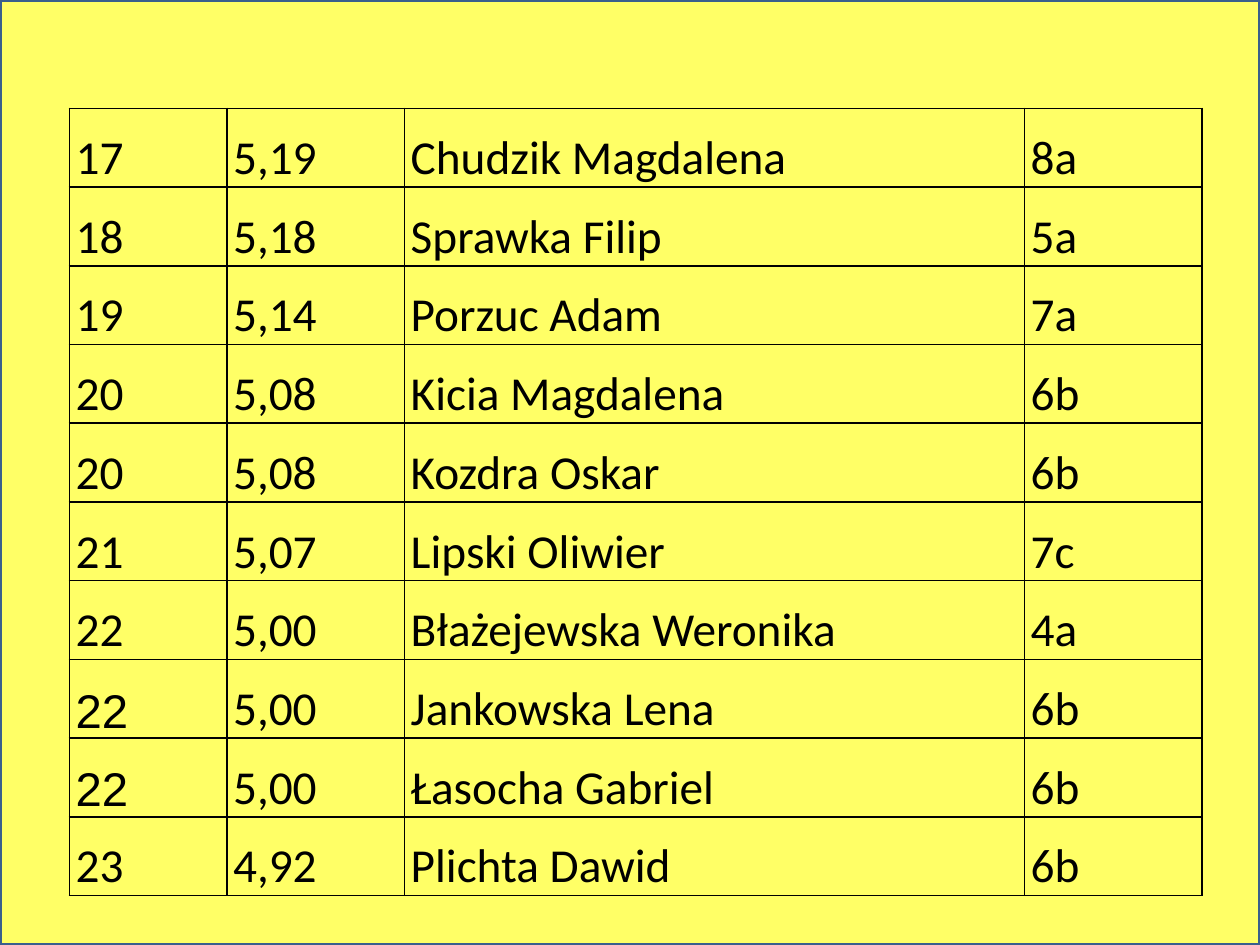
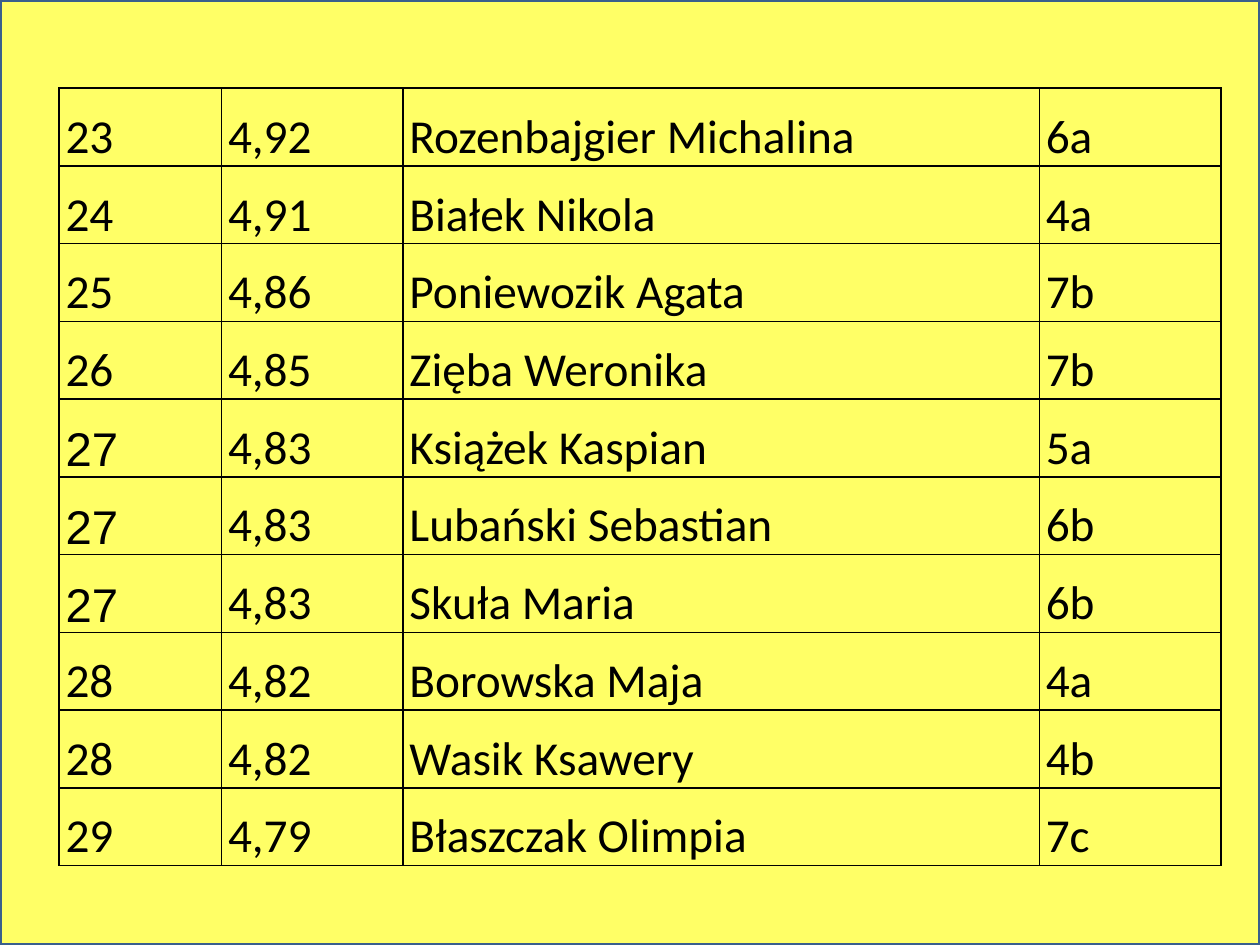
from lxml import etree
from pptx import Presentation
from pptx.dml.color import RGBColor
from pptx.enum.shapes import MSO_SHAPE
from pptx.enum.text import MSO_ANCHOR
from pptx.oxml.ns import qn
from pptx.util import Inches, Pt

RECTANGLE = MSO_SHAPE.RECTANGLE
BOTTOM = MSO_ANCHOR.BOTTOM
COLORS = {"background": "FFFF66", "frame": "3A5F8C", "ink": "000000"}
BORDER_WIDTH = Pt(1)

# Column widths follow rank, average, pupil, class; the ranks in
# "arial_rows" (by row index) are set in Arial with single line spacing.
RANKINGS = [
    {
        "left": 0.55, "top": 0.86, "height": 6.25,
        "columns": [1.25, 1.41, 4.92, 1.41],
        "arial_rows": {7, 8},
        "pupils": [
            ("17", "5,19", "Chudzik Magdalena", "8a"),
            ("18", "5,18", "Sprawka Filip", "5a"),
            ("19", "5,14", "Porzuc Adam", "7a"),
            ("20", "5,08", "Kicia Magdalena", "6b"),
            ("20", "5,08", "Kozdra Oskar", "6b"),
            ("21", "5,07", "Lipski Oliwier", "7c"),
            ("22", "5,00", "Błażejewska Weronika", "4a"),
            ("22", "5,00", "Jankowska Lena", "6b"),
            ("22", "5,00", "Łasocha Gabriel", "6b"),
            ("23", "4,92", "Plichta Dawid", "6b"),
        ],
    },
    {
        "left": 0.47, "top": 0.7, "height": 6.17,
        "columns": [1.29, 1.44, 5.05, 1.44],
        "arial_rows": {4, 5, 6},
        "pupils": [
            ("23", "4,92", "Rozenbajgier Michalina", "6a"),
            ("24", "4,91", "Białek Nikola", "4a"),
            ("25", "4,86", "Poniewozik Agata", "7b"),
            ("26", "4,85", "Zięba Weronika", "7b"),
            ("27", "4,83", "Książek Kaspian", "5a"),
            ("27", "4,83", "Lubański Sebastian", "6b"),
            ("27", "4,83", "Skuła Maria", "6b"),
            ("28", "4,82", "Borowska Maja", "4a"),
            ("28", "4,82", "Wasik Ksawery", "4b"),
            ("29", "4,79", "Błaszczak Olimpia", "7c"),
        ],
    },
]


def write_cell(cell, text, font="Calibri", size=27, color="ink", spacing=1.15):
    cell.vertical_anchor = BOTTOM
    cell.margin_left = cell.margin_right = Inches(0.05)
    cell.margin_top = cell.margin_bottom = 0
    para = cell.text_frame.paragraphs[0]
    para.line_spacing = spacing
    span = para.add_run()
    span.text = text
    span.font.name = font
    span.font.size = Pt(size)
    span.font.color.rgb = RGBColor.from_string(COLORS[color])


def outline_cell(cell, color="ink"):
    properties = cell._tc.get_or_add_tcPr()
    for side in ("lnL", "lnR", "lnT", "lnB"):
        line = etree.SubElement(properties, qn(f"a:{side}"), w=str(BORDER_WIDTH))
        fill = etree.SubElement(line, qn("a:solidFill"))
        etree.SubElement(fill, qn("a:srgbClr"), val=COLORS[color])


deck = Presentation()
deck.slide_width = Inches(10)
deck.slide_height = Inches(7.5)

for ranking in RANKINGS:
    page = deck.slides.add_slide(deck.slide_layouts[6])

    backdrop = page.shapes.add_shape(RECTANGLE, 0, 0, deck.slide_width, deck.slide_height)
    backdrop.shadow.inherit = False
    backdrop.fill.solid()
    backdrop.fill.fore_color.rgb = RGBColor.from_string(COLORS["background"])
    backdrop.line.color.rgb = RGBColor.from_string(COLORS["frame"])
    backdrop.line.width = Pt(2)

    pupils, columns = ranking["pupils"], ranking["columns"]
    table = page.shapes.add_table(
        len(pupils), len(columns),
        Inches(ranking["left"]), Inches(ranking["top"]),
        Inches(sum(columns)), Inches(ranking["height"]),
    ).table
    table.first_row = False
    table.horz_banding = False
    for column, width in zip(table.columns, columns):
        column.width = Inches(width)

    for row_index, pupil in enumerate(pupils):
        for column_index, text in enumerate(pupil):
            cell = table.cell(row_index, column_index)
            if column_index == 0 and row_index in ranking["arial_rows"]:
                write_cell(cell, text, font="Arial", spacing=1.0)
            else:
                write_cell(cell, text)
            outline_cell(cell)
            cell.fill.background()

deck.save("out.pptx")
